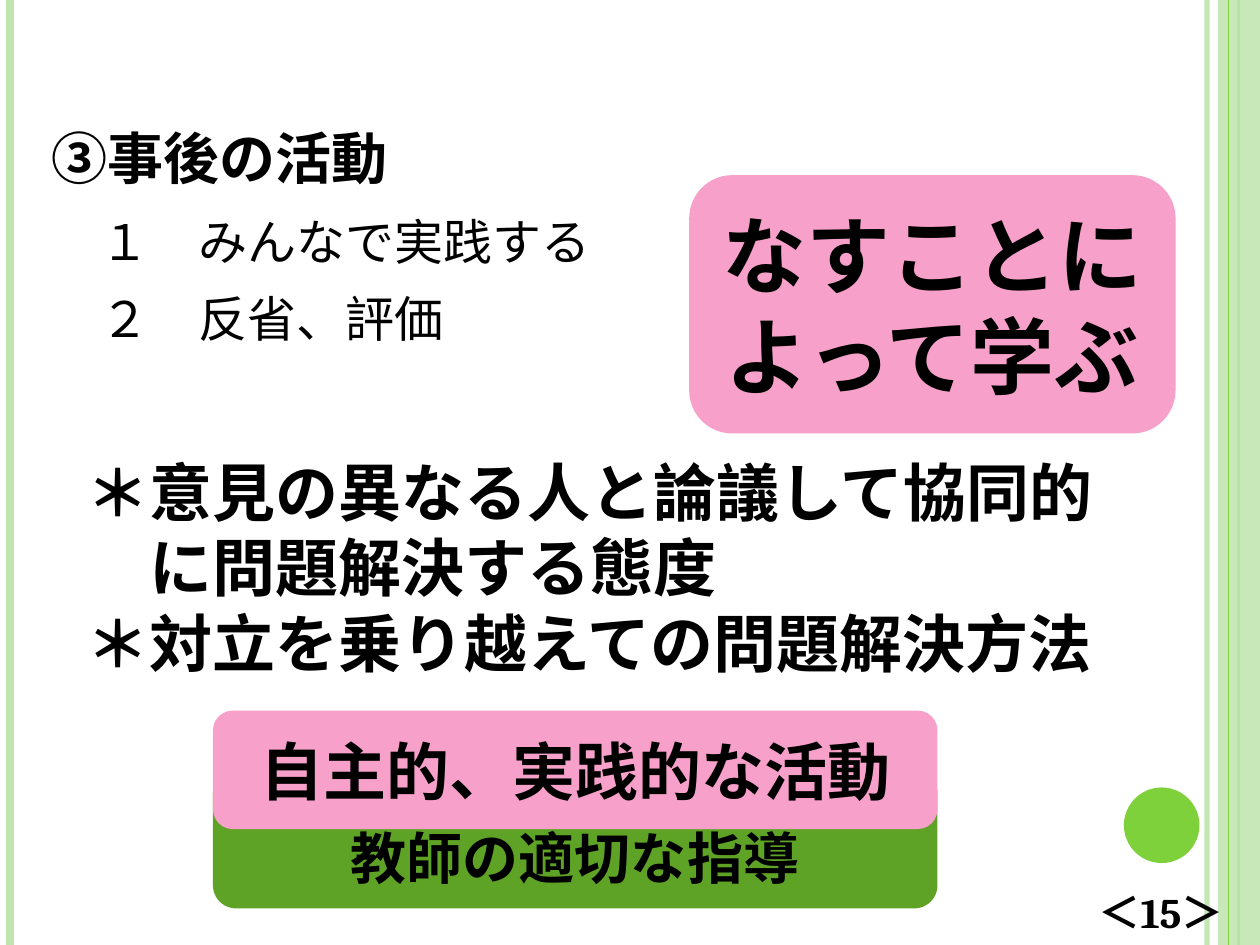
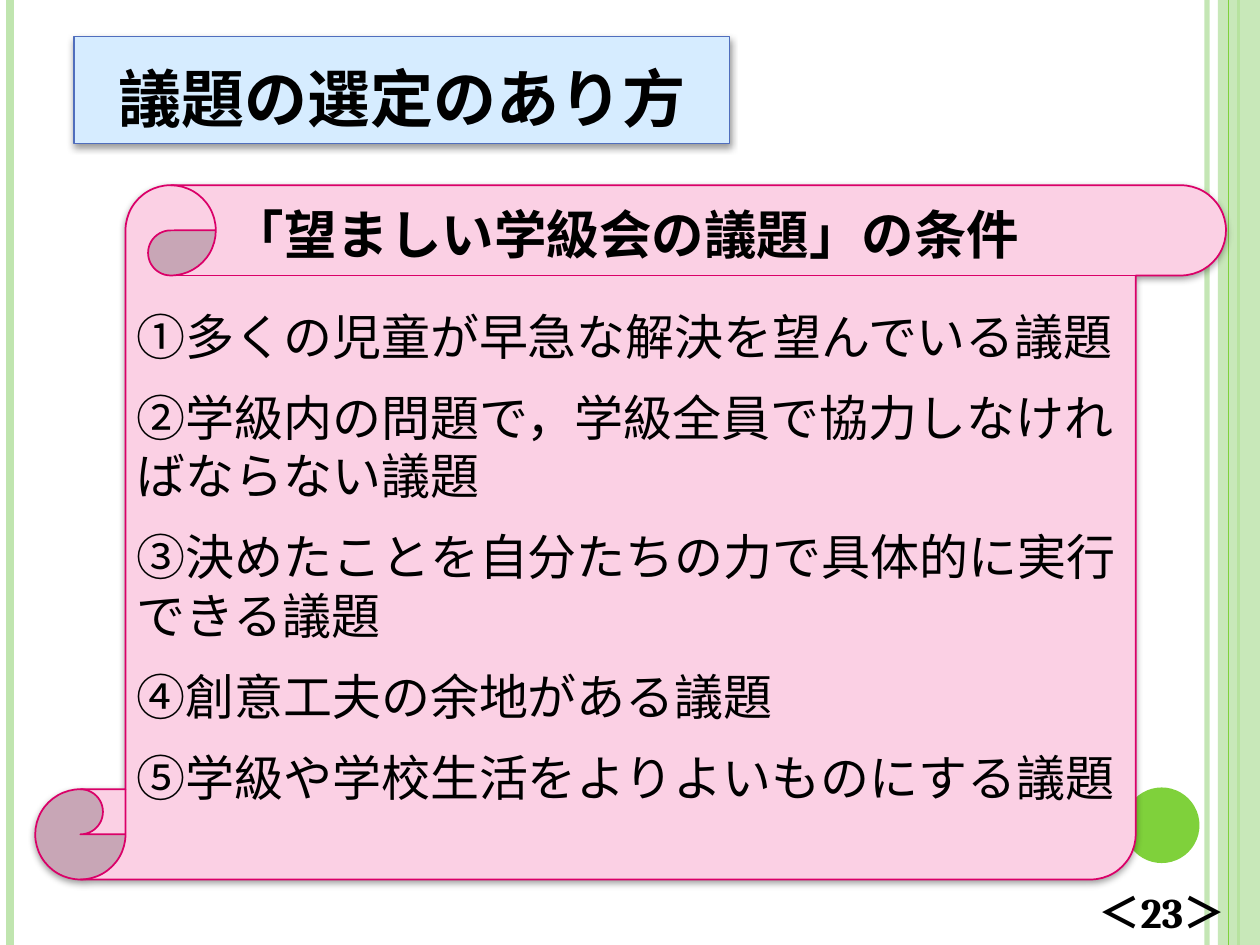
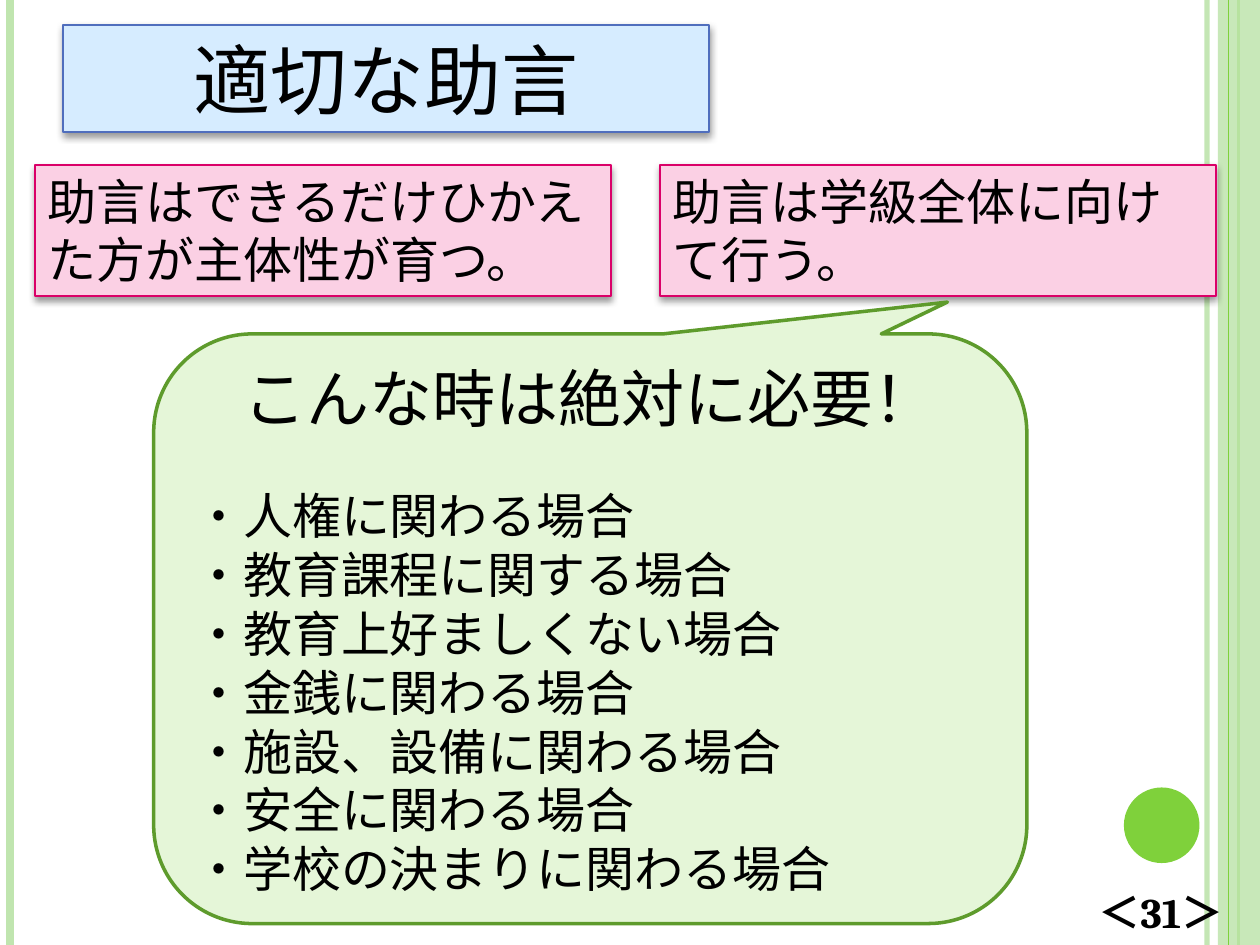
from lxml import etree
from pptx import Presentation
from pptx.dml.color import RGBColor
from pptx.enum.shapes import MSO_CONNECTOR, MSO_SHAPE
from pptx.enum.text import MSO_ANCHOR, MSO_AUTO_SIZE, PP_ALIGN
from pptx.oxml.ns import qn
from pptx.util import Pt

SLIDE_WIDTH, SLIDE_HEIGHT = 720, 540
BLACK = RGBColor(0x00, 0x00, 0x00)
GREEN = RGBColor(0x7F, 0xD1, 0x3B)
PALE_GREEN = RGBColor(0xC0, 0xE5, 0xAF)
DARK_GREEN = RGBColor(0x5F, 0xA3, 0x26)
CALLOUT_FILL = RGBColor(0xE5, 0xF6, 0xD8)
CALLOUT_LINE = RGBColor(0x5E, 0x9B, 0x2C)
PINK = RGBColor(0xF7, 0xA1, 0xCA)
PALE_PINK = RGBColor(0xFB, 0xD0, 0xE4)
MAGENTA = RGBColor(0xDA, 0x00, 0x68)
PALE_BLUE = RGBColor(0xD6, 0xEC, 0xFF)
BLUE = RGBColor(0x50, 0x6E, 0xBD)

BODY_FONT, NUMBER_FONT = "Noto Sans CJK JP", "Cambria"
LINE_PITCH = 1.2

# x, width, colour, opacity in percent
FRAME_LINES = [
    (689.76, 3, PALE_GREEN, 93),
    (5.76, 4.5, PALE_GREEN, 100),
    (707.76, 1.5, GREEN, 100),
    (702, 0.75, GREEN, 100),
]

AFTER = {
    "number": 15,
    "title": "③事後の活動",
    "steps": ["１　みんなで実践する", "２　反省、評価"],
    "motto": "なすことによって学ぶ",
    "attitudes": ["＊意見の異なる人と論議して協同的", "に問題解決する態度",
                  "＊対立を乗り越えての問題解決方法"],
    "activity": "自主的、実践的な活動",
    "guidance": "教師の適切な指導",
}
TOPICS = {
    "number": 23,
    "title": "議題の選定のあり方",
    "heading": "「望ましい学級会の議題」の条件",
    "conditions": [
        "①多くの児童が早急な解決を望んでいる議題",
        "②学級内の問題で，学級全員で協力しなければならない議題",
        "③決めたことを自分たちの力で具体的に実行できる議題",
        "④創意工夫の余地がある議題",
        "⑤学級や学校生活をよりよいものにする議題",
    ],
}
ADVICE = {
    "number": 31,
    "title": "適切な助言",
    "tips": [("助言は学級全体に向けて行う。", 377.28, 317.52),
             ("助言はできるだけひかえた方が主体性が育つ。", 20.16, 329.04)],
    "heading": "こんな時は絶対に必要！",
    "cases": ["・人権に関わる場合", "・教育課程に関する場合", "・教育上好ましくない場合",
              "・金銭に関わる場合", "・施設、設備に関わる場合", "・安全に関わる場合",
              "・学校の決まりに関わる場合"],
}


def set_opacity(element, percent):
    color = next(element.iter(qn("a:srgbClr")))
    etree.SubElement(color, qn("a:alpha"), val=str(percent * 1000))


def add_effects(shape, shadow=False):
    """Give the shape an explicit effect list, empty or with a soft drop shadow."""
    effects = etree.SubElement(shape._element.spPr, qn("a:effectLst"))
    if shadow:
        outer = etree.SubElement(effects, qn("a:outerShdw"), blurRad=str(Pt(4)),
                                 dist=str(Pt(2)), dir="5400000", rotWithShape="0")
        color = etree.SubElement(outer, qn("a:srgbClr"), val=str(BLACK))
        etree.SubElement(color, qn("a:alpha"), val="40000")


def place(shape, left, top, width, height):
    shape.left, shape.top, shape.width, shape.height = map(Pt, (left, top, width, height))


def paint(shape, fill, line=None, line_width=1, shadow=False):
    shape.fill.solid()
    shape.fill.fore_color.rgb = fill
    if line is None:
        shape.line.fill.background()
    else:
        shape.line.color.rgb = line
        shape.line.width = Pt(line_width)
    add_effects(shape, shadow)


def add_panel(page, kind, area, fill, **style):
    panel = page.shapes.add_shape(kind, *map(Pt, area))
    paint(panel, fill, **style)
    return panel


def write(shape, lines, size, bold=False, align=PP_ALIGN.LEFT, anchor=MSO_ANCHOR.MIDDLE,
          font=BODY_FONT, pitch=None, gap=0, indents=(), margins=(7.2, 3.6, 7.2, 3.6)):
    """Fill a shape with one paragraph per line; pitch is the line height in points."""
    frame = shape.text_frame
    frame.word_wrap = True
    frame.auto_size = MSO_AUTO_SIZE.NONE
    frame.vertical_anchor = anchor
    (frame.margin_left, frame.margin_top,
     frame.margin_right, frame.margin_bottom) = map(Pt, margins)
    for index, text in enumerate(lines):
        para = frame.paragraphs[0] if index == 0 else frame.add_paragraph()
        para.alignment = align
        para.line_spacing = Pt(pitch or size * LINE_PITCH)
        para.space_before = Pt(gap if index else 0)
        para.space_after = Pt(0)
        properties = para._p.get_or_add_pPr()
        properties.set("marL", str(Pt(indents[index] if indents else 0)))
        properties.set("indent", "0")
        etree.SubElement(properties, qn("a:buNone"))
        span = para.add_run()
        span.text = text
        span.font.size = Pt(size)
        span.font.bold = bold
        span.font.color.rgb = BLACK
        span.font.name = font
        etree.SubElement(span._r.get_or_add_rPr(), qn("a:ea"), typeface=BODY_FONT)


def add_text(page, area, lines, size, **style):
    box = page.shapes.add_textbox(*map(Pt, area))
    write(box, lines, size, **style)


def fill_placeholder(page, index, area, lines, size, **style):
    """Place a placeholder in front of everything drawn so far and write in it."""
    holder = page.placeholders[index]
    page.shapes._spTree.append(holder._element)
    place(holder, *area)
    write(holder, lines, size, **style)
    return holder


def add_title_plate(page, area, text, size, **style):
    plate = fill_placeholder(page, 0, area, [text], size, align=PP_ALIGN.CENTER, **style)
    paint(plate, PALE_BLUE, line=BLUE, shadow=True)


def add_page(deck, number):
    page = deck.slides.add_slide(deck.slide_layouts[1])
    for x, width, color, opacity in FRAME_LINES:
        rule = page.shapes.add_connector(MSO_CONNECTOR.STRAIGHT, Pt(x), 0, Pt(x), Pt(SLIDE_HEIGHT))
        rule.line.color.rgb = color
        rule.line.width = Pt(width)
        set_opacity(rule._element.spPr, opacity)
        add_effects(rule)
        if x == 707.76:
            band = add_panel(page, MSO_SHAPE.RECTANGLE, (696, 0, 24, SLIDE_HEIGHT), PALE_GREEN)
            set_opacity(band._element.spPr, 87)
    add_panel(page, MSO_SHAPE.OVAL, (642.24, 450, 43.2, 43.2), GREEN)
    add_text(page, (620.64, 502.56, 102.24, 37), [f"＜{number}＞"], 24, bold=True, font=NUMBER_FONT)
    return page


def build_after(deck):
    page = add_page(deck, AFTER["number"])
    center = {"bold": True, "align": PP_ALIGN.CENTER}
    rounded = MSO_SHAPE.ROUNDED_RECTANGLE
    guidance = add_panel(page, rounded, (121.68, 439.92, 414, 79.2), DARK_GREEN)
    write(guidance, [AFTER["guidance"]], 32, anchor=MSO_ANCHOR.BOTTOM,
          margins=(7.2, 3.6, 7.2, 6.4), **center)
    fill_placeholder(page, 0, (22.32, 75.6, 360, 40), [AFTER["title"]], 32, bold=True,
                     anchor=MSO_ANCHOR.TOP, pitch=30)
    fill_placeholder(page, 1, (50.32, 120.6, 330, 86), AFTER["steps"], 28,
                     anchor=MSO_ANCHOR.TOP, pitch=30, gap=14)
    motto = add_panel(page, rounded, (393.84, 100.08, 277.92, 147.6), PINK)
    write(motto, [AFTER["motto"]], 48, **center)
    add_text(page, (42.48, 258.48, 652.32, 130.32), AFTER["attitudes"], 36, bold=True,
             indents=(0, 36, 0))
    activity = add_panel(page, rounded, (121.68, 406.08, 414, 67.68), PINK)
    write(activity, [AFTER["activity"]], 36, **center)


def build_topics(deck):
    page = add_page(deck, TOPICS["number"])
    scroll = add_panel(page, MSO_SHAPE.VERTICAL_SCROLL, (20.16, 105.84, 680.4, 396.72),
                       PALE_PINK, line=MAGENTA, shadow=True)
    scroll.adjustments[0] = 0.13
    add_text(page, (95.76, 111.6, 523.44, 43.92), [TOPICS["heading"]], 30, bold=True,
             align=PP_ALIGN.CENTER)
    fill_placeholder(page, 1, (78, 175, 568, 310), TOPICS["conditions"], 28,
                     anchor=MSO_ANCHOR.TOP, gap=12.6, margins=(0, 0, 0, 0))
    add_title_plate(page, (42.48, 20.88, 374.4, 61.2), TOPICS["title"], 36, bold=True,
                    pitch=36 * LINE_PITCH * 1.2)


def build_advice(deck):
    page = add_page(deck, ADVICE["number"])
    add_title_plate(page, (36, 14.4, 369.36, 61.2), ADVICE["title"], 44)
    for tip, left, width in ADVICE["tips"]:
        panel = add_panel(page, MSO_SHAPE.RECTANGLE, (left, 94.32, width, 74.88), PALE_PINK,
                          line=MAGENTA, shadow=True)
        write(panel, [tip], 28, anchor=MSO_ANCHOR.TOP)
    callout = add_panel(page, MSO_SHAPE.ROUNDED_RECTANGULAR_CALLOUT,
                        (87.84, 190.8, 498.96, 336.96), CALLOUT_FILL,
                        line=CALLOUT_LINE, line_width=2)
    for index, value in enumerate((0.409, -0.554, 0.167)):
        callout.adjustments[index] = value
    add_text(page, (87.84, 205.7, 498.96, 43.2), [ADVICE["heading"]], 36,
             align=PP_ALIGN.CENTER, margins=(0, 0, 0, 0))
    fill_placeholder(page, 1, (111, 277.7, 452, 236), ADVICE["cases"], 28,
                     anchor=MSO_ANCHOR.TOP, margins=(0, 0, 0, 0))


def main():
    deck = Presentation()
    deck.slide_width, deck.slide_height = Pt(SLIDE_WIDTH), Pt(SLIDE_HEIGHT)
    build_after(deck)
    build_topics(deck)
    build_advice(deck)
    deck.save("out.pptx")


if __name__ == "__main__":
    main()
